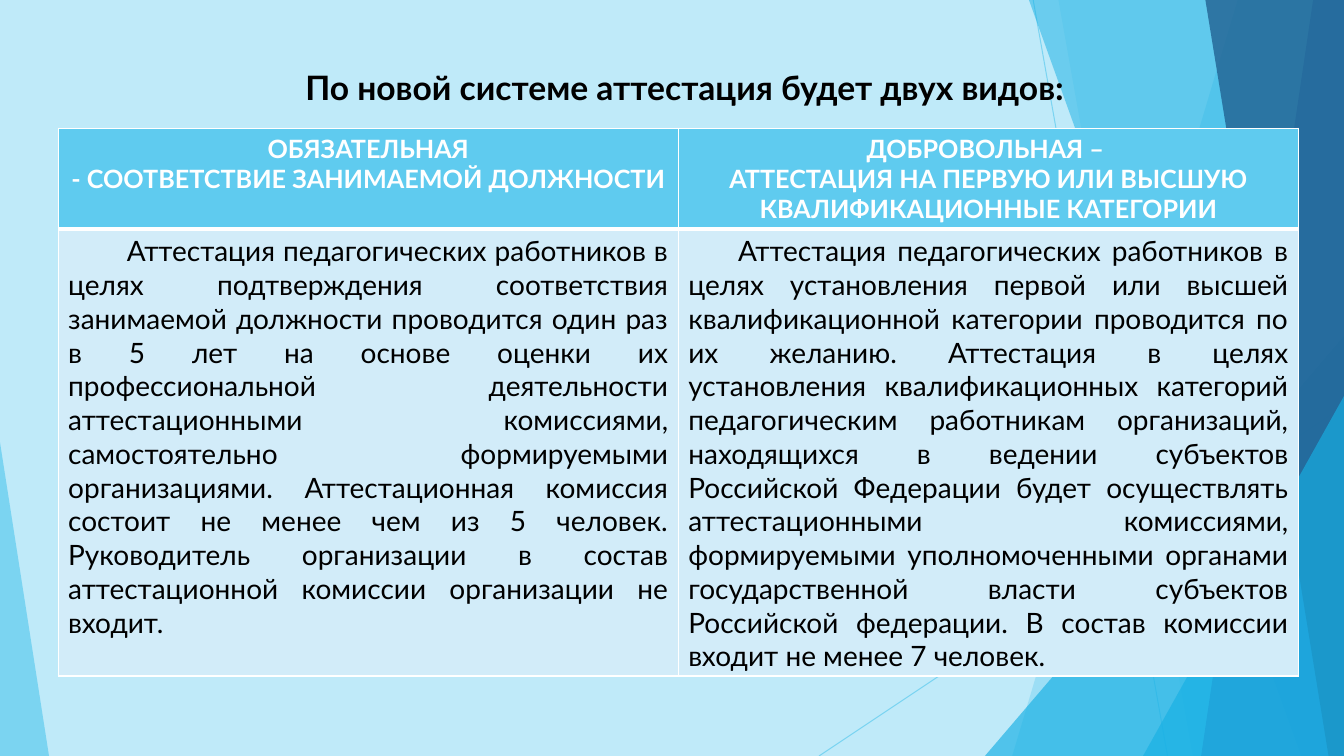
from lxml import etree
from pptx import Presentation
from pptx.dml.color import RGBColor
from pptx.enum.shapes import MSO_CONNECTOR, MSO_SHAPE
from pptx.enum.text import MSO_ANCHOR, PP_ALIGN
from pptx.oxml.ns import qn
from pptx.util import Pt

LINE = MSO_CONNECTOR.STRAIGHT
TRI = MSO_SHAPE.RIGHT_TRIANGLE
PEAK = MSO_SHAPE.ISOSCELES_TRIANGLE
TOP = MSO_ANCHOR.TOP
MID, JUST = PP_ALIGN.CENTER, PP_ALIGN.JUSTIFY
FONT = "Lato"
HUES = {
    "back": "BFEAF9", "sky": "5FCBEF", "blue": "17B0E4", "steel": "2E83C3",
    "navy": "226292", "pale": "D2ECF9", "white": "FFFFFF", "black": "000000",
}
TITLE = "По новой системе аттестация будет двух видов:"
HEADS = [
    ["ОБЯЗАТЕЛЬНАЯ", "- СООТВЕТСТВИЕ ЗАНИМАЕМОЙ ДОЛЖНОСТИ"],
    ["ДОБРОВОЛЬНАЯ – ",
     "АТТЕСТАЦИЯ НА ПЕРВУЮ ИЛИ ВЫСШУЮ КВАЛИФИКАЦИОННЫЕ КАТЕГОРИИ"],
]
BODIES = [
    ("Аттестация педагогических работников в целях подтверждения соответствия "
     "занимаемой должности проводится один раз в 5 лет на основе оценки их "
     "профессиональной деятельности аттестационными комиссиями, самостоятельно "
     "формируемыми организациями. Аттестационная комиссия состоит не менее чем "
     "из 5 человек. Руководитель организации в состав аттестационной комиссии "
     "организации не входит.", 42),
    ("Аттестация педагогических работников в целях установления первой или "
     "высшей квалификационной категории проводится по их желанию. Аттестация в "
     "целях установления квалификационных категорий педагогическим работникам "
     "организаций, находящихся в ведении субъектов Российской Федерации будет "
     "осуществлять аттестационными комиссиями, формируемыми уполномоченными "
     "органами государственной власти субъектов Российской федерации. В состав "
     "комиссии входит не менее 7 человек. ", 35.5),
]


def tint(fill, hue, alpha=100):
    """Set a solid colour with the given opacity in percent."""
    fill.solid()
    fill.fore_color.rgb = RGBColor.from_string(HUES[hue])
    if alpha < 100:
        for node in fill._xPr.iter(qn("a:srgbClr")):
            etree.SubElement(node, qn("a:alpha"), val=str(alpha * 1000))


def write(frame, lines, size=18, hue="white", bold=True, align=MID, indent=0):
    """Write paragraphs into a text frame in one format."""
    frame.word_wrap = True
    for i, line in enumerate(lines):
        para = frame.paragraphs[0] if i == 0 else frame.add_paragraph()
        para.alignment = align
        if indent:
            para._p.get_or_add_pPr().set("indent", str(Pt(indent)))
        run = para.add_run()
        run.text = line
        run.font.name, run.font.size, run.font.bold = FONT, Pt(size), bold
        run.font.color.rgb = RGBColor.from_string(HUES[hue])


def finish(shape, hue, alpha):
    """Give a facet its fill without outline or shadow."""
    shape.shadow.inherit = False
    tint(shape.fill, hue, alpha)
    shape.line.fill.background()


def ray(slide, start, end):
    """Draw one thin line of the backdrop."""
    line = slide.shapes.add_connector(LINE, *map(Pt, start + end))
    line.line.width = Pt(0.75)
    tint(line.line.fill, "sky", 70)
    etree.SubElement(line._element.spPr, qn("a:effectLst"))


def facet(slide, box, top, base, hue, alpha):
    """Fill the box to its right edge from a slanted left side."""
    x, y, w, h = box
    pts = [(x + top, y), (x + w, y), (x + w, y + h), (x + base, y + h)]
    pts = [(Pt(a), Pt(b)) for a, b in pts]
    form = slide.shapes.build_freeform(*pts[0])
    form.add_line_segments(pts[1:], close=True)
    finish(form.convert_to_shape(), hue, alpha)


def wedge(slide, box, w, h, hue, alpha, left=False):
    """Put a triangle into a bottom corner of the box."""
    x = box[0] if left else box[0] + box[2] - w
    y = box[1] + box[3] - h
    kind = TRI if left else PEAK
    shape = slide.shapes.add_shape(kind, *map(Pt, (x, y, w, h)))
    if not left:
        shape.adjustments[0] = 1
    finish(shape, hue, alpha)


def backdrop(slide, box):
    """Draw the rays and facets of the backdrop in the box."""
    tint(slide.background.fill, "back")
    x, y, w, h = box
    ray(slide, (x + 738, y), (x + 834, y + h))
    ray(slide, (x + w, y + 290), (x + 585, y + h))
    facet(slide, box, 884, 723, "sky", 36)
    facet(slide, box, 756, 852, "sky", 20)
    wedge(slide, box, 256.5, 300, "blue", 66)
    facet(slide, box, 735, 929.5, "blue", 50)
    facet(slide, box, 938, 858, "steel", 70)
    facet(slide, box, 861, 949, "navy", 80)
    wedge(slide, box, 143.5, 257, "blue", 66)
    wedge(slide, box, 35, 224, "sky", 70, left=True)


def heading(slide, box):
    """Place the slide title in the box."""
    text = slide.shapes.add_textbox(*map(Pt, box)).text_frame
    text.vertical_anchor = TOP
    write(text, [TITLE], size=24, hue="black")


def edge(cell, base):
    """Rule a cell in white, with its own width at the base."""
    props = cell._tc.get_or_add_tcPr()
    for i, (side, wide) in enumerate(zip("LRTB", (1, 1, 1, base))):
        line = etree.Element(qn("a:ln" + side), w=str(Pt(wide)))
        fill = etree.SubElement(line, qn("a:solidFill"))
        etree.SubElement(fill, qn("a:srgbClr"), val=HUES["white"])
        props.insert(i, line)


def kinds(slide, box, head):
    """Place the table of both kinds in the box."""
    table = slide.shapes.add_table(2, 2, *map(Pt, box)).table
    table.rows[0].height = Pt(head)
    table.rows[1].height = Pt(box[3] - head)
    for col, (lines, (body, indent)) in enumerate(zip(HEADS, BODIES)):
        table.columns[col].width = Pt(box[2] / 2)
        top, low = table.cell(0, col), table.cell(1, col)
        write(top.text_frame, lines)
        write(low.text_frame, [body], size=20, hue="black", bold=False,
              align=JUST, indent=indent)
        for cell, hue, base in ((top, "sky", 3), (low, "pale", 1)):
            tint(cell.fill, hue)
            edge(cell, base)


def main():
    """Build the slide and save it."""
    deck = Presentation()
    deck.slide_width, deck.slide_height = Pt(960), Pt(540)
    slide = deck.slides.add_slide(deck.slide_layouts[6])
    backdrop(slide, (0, 0, 960, 540))
    heading(slide, (50.5, 44.5, 877, 58))
    kinds(slide, (41.5, 91.5, 886, 391), 72)
    deck.save("out.pptx")


if __name__ == "__main__":
    main()
